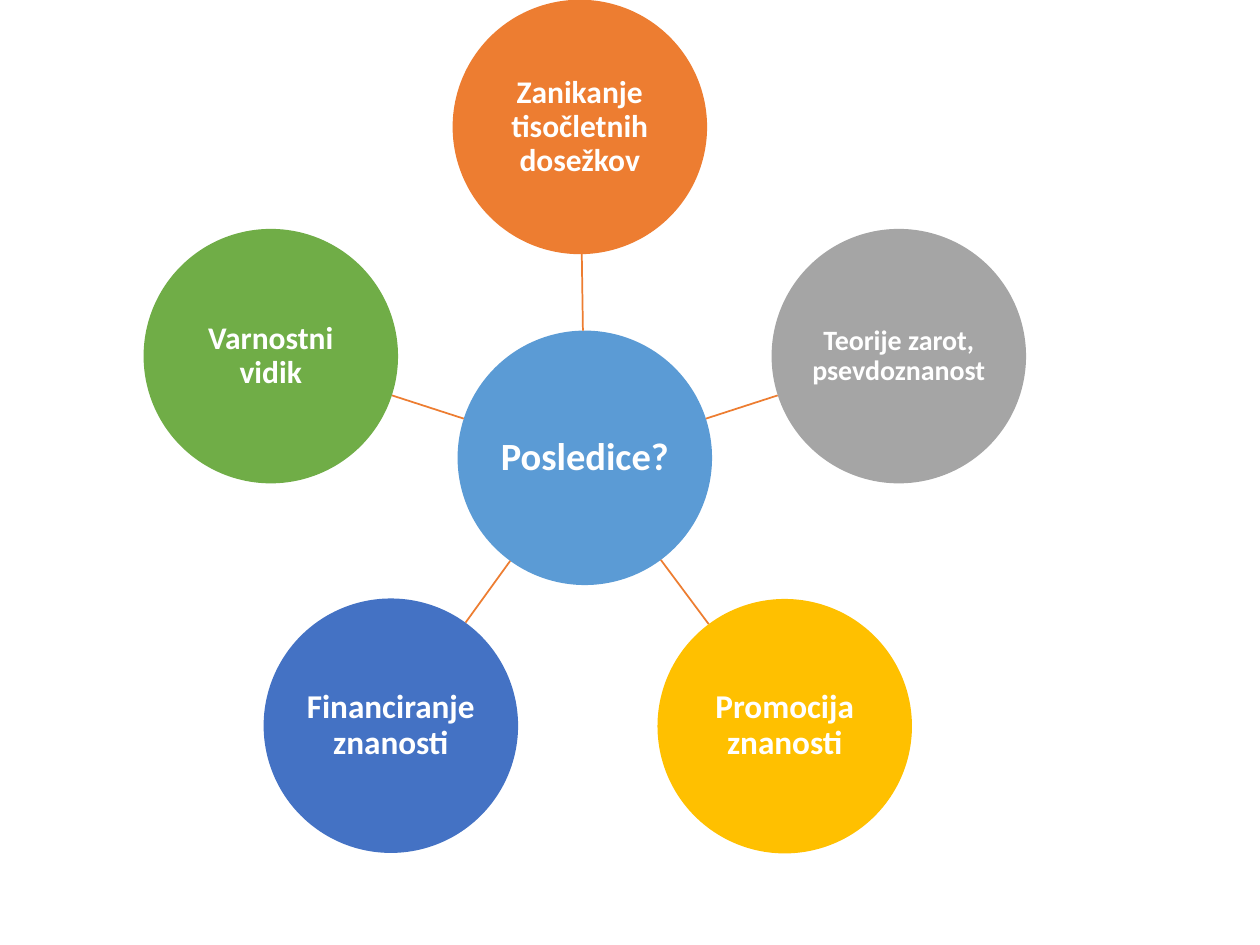
import math
import pptx
import pptx.dml.color
import pptx.enum.shapes
import pptx.enum.text
import pptx.util
import lxml.etree

Cm = pptx.util.Cm
Pt = pptx.util.Pt
RGB = pptx.dml.color.RGBColor

WHITE = RGB(0xFF, 0xFF, 0xFF)
BLUE = RGB(0x5B, 0x9B, 0xD5)
ORANGE = RGB(0xED, 0x7D, 0x31)
GRAY = RGB(0xA5, 0xA5, 0xA5)
GOLD = RGB(0xFF, 0xC0, 0x00)
NAVY = RGB(0x44, 0x72, 0xC4)
GREEN = RGB(0x70, 0xAD, 0x47)

SIZE = 5.13
HUB = (11.79, 9.23)
NODES = [
    ("Zanikanje tisočletnih dosežkov", (11.69, 2.56), ORANGE, 18),
    ("Teorije zarot, psevdoznanost", (18.12, 7.18), GRAY, 16),
    ("Promocija znanosti", (15.82, 14.64), GOLD, 19),
    ("Financiranje znanosti", (7.88, 14.63), NAVY, 19),
    ("Varnostni vidik", (5.46, 7.18), GREEN, 18),
]


def add_disc(slide, text, mid, fill, size):
    """Add a filled circle with a centred label around a midpoint."""
    left, top = (Cm(c - SIZE / 2) for c in mid)
    oval = pptx.enum.shapes.MSO_SHAPE.OVAL
    disc = slide.shapes.add_shape(oval, left, top, Cm(SIZE), Cm(SIZE))
    disc.shadow.inherit = False
    disc.fill.solid()
    disc.fill.fore_color.rgb = fill
    disc.line.fill.background()
    frame = disc.text_frame
    frame.word_wrap = True
    frame.vertical_anchor = pptx.enum.text.MSO_ANCHOR.MIDDLE
    frame.margin_left = frame.margin_right = Cm(0.03)
    frame.margin_top = frame.margin_bottom = Cm(0.03)
    frame.text = text
    para = frame.paragraphs[0]
    para.alignment = pptx.enum.text.PP_ALIGN.CENTER
    para.line_spacing = 0.9
    font = para.runs[0].font
    font.name = "Calibri"
    font.size = Pt(size)
    font.bold = True
    font.color.rgb = WHITE


def add_spoke(slide, mid):
    """Add a line from the rim of the hub to the rim of a node."""
    part = SIZE / 2 / math.dist(HUB, mid)
    start = [Cm(h + (m - h) * part) for h, m in zip(HUB, mid)]
    end = [Cm(m - (m - h) * part) for h, m in zip(HUB, mid)]
    kind = pptx.enum.shapes.MSO_CONNECTOR.STRAIGHT
    spoke = slide.shapes.add_connector(kind, *start, *end)
    spoke.line.color.rgb = ORANGE
    spoke.line.width = Pt(1)
    tag = pptx.oxml.ns.qn("a:effectLst")
    lxml.etree.SubElement(spoke._element.spPr, tag)


def main():
    """Build the hub and its ring of nodes."""
    deck = pptx.Presentation()
    deck.slide_width = Cm(25.4)
    deck.slide_height = Cm(19.05)
    slide = deck.slides.add_slide(deck.slide_layouts[6])
    add_disc(slide, "Posledice?", HUB, BLUE, 22)
    for text, mid, fill, size in NODES:
        add_spoke(slide, mid)
        add_disc(slide, text, mid, fill, size)
    deck.save("out.pptx")


if __name__ == "__main__":
    main()
